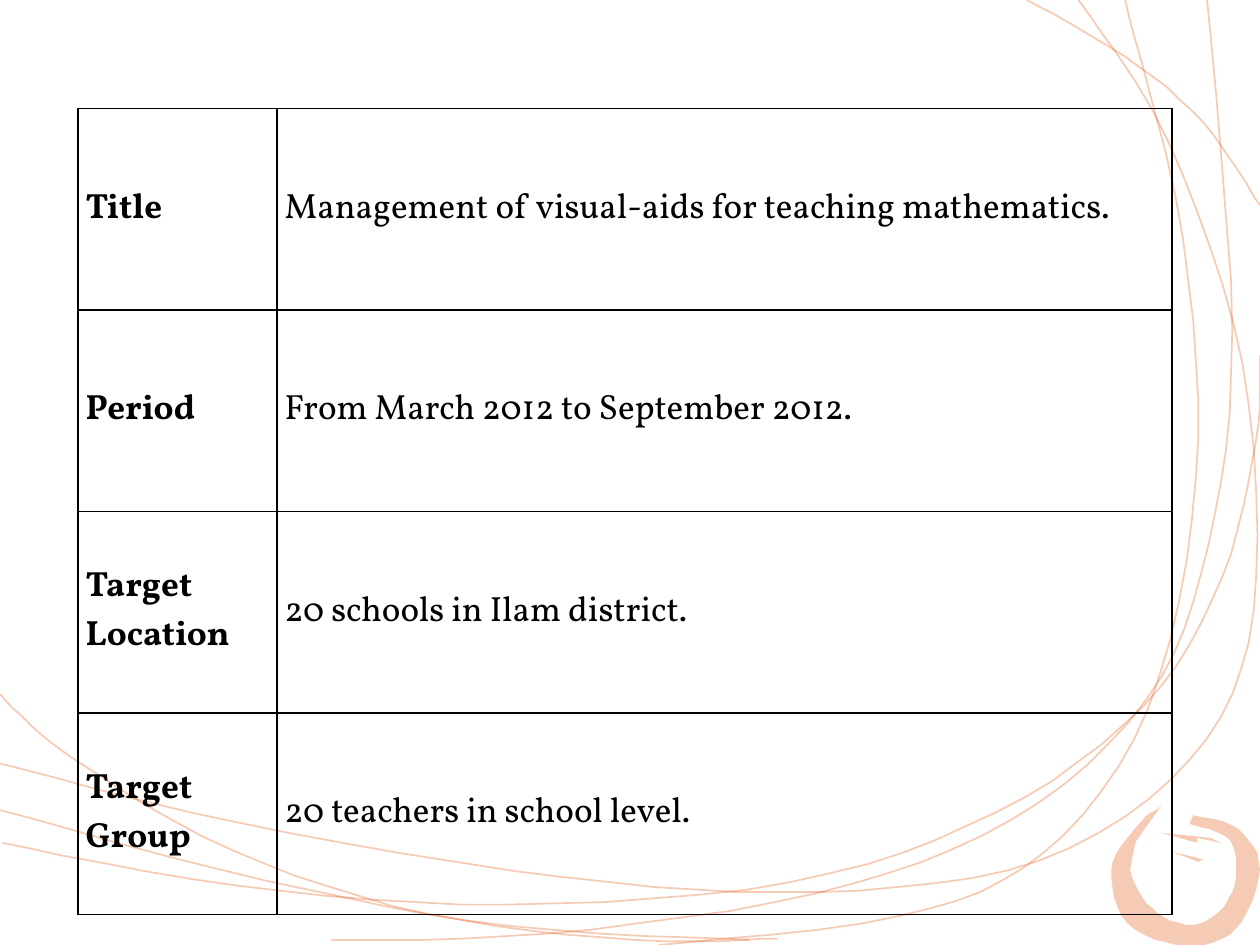
from lxml.etree import SubElement
from pptx import Presentation
from pptx.dml.color import RGBColor
from pptx.enum.text import MSO_ANCHOR as Anchor, PP_ALIGN as Align
from pptx.oxml.ns import qn
from pptx.util import Pt

PX = 9144  # EMU per px, 100 px to the inch
ORANGE = RGBColor(0xE3, 0x56, 0x0E)
BLACK = RGBColor(0x00, 0x00, 0x00)

ROWS = [
    ("Title", "Management of visual-aids for teaching mathematics."),
    ("Period", "From March 2012 to September 2012."),
    ("Target Location", "20 schools in Ilam district."),
    ("Target Group", "20 teachers in school level."),
]

# Points that each smooth strand passes through
STRANDS = [
    [(-3, 548), (55, 600), (185, 675), (338, 725), (504, 746), (617, 745)],
    [(523, 750), (714, 727), (828, 677), (911, 563), (949, 380), (939, 190), (893, 0)],
    [(0, 606), (190, 653), (446, 696), (649, 708), (825, 683), (945, 602),
     (995, 485), (986, 288), (927, 112), (856, 0)],
    [(2, 669), (189, 703), (403, 718), (628, 700), (790, 645), (908, 560),
     (970, 458), (997, 349), (1000, 282)],
    [(263, 746), (435, 741), (648, 709), (802, 651), (910, 555), (959, 433),
     (978, 263), (958, 0)],
    [(815, 0), (893, 45), (954, 96), (1000, 163)],
    [(0, 643), (211, 699), (405, 735), (595, 746)],
]
RING_OUTSIDE = [(947, 647), (983, 658), (1000, 690), (981, 737), (942, 751),
                (895, 733), (882, 690), (902, 656), (922, 639)]
RING_INSIDE = [(902, 667), (898, 695), (919, 725), (952, 733), (978, 708),
               (977, 668), (944, 654)]
SLIVERS = [
    [(922, 661), (961, 665), (969, 669), (950, 665), (950, 669)],
    [(930, 676), (955, 682), (951, 684)],
]


def smooth(points, steps=6):
    """Return points along a Catmull-Rom curve through the given points."""
    padded = [points[0], *points, points[-1]]
    curve = [points[0]]
    for before, start, end, after in zip(padded, padded[1:], padded[2:], padded[3:]):
        for step in range(1, steps + 1):
            t = step / steps
            curve.append(tuple(
                (2 * b + (c - a) * t + (2 * a - 5 * b + 4 * c - d) * t ** 2
                 + (3 * b - a - 3 * c + d) * t ** 3) / 2
                for a, b, c, d in zip(before, start, end, after)))
    return curve


class SlideBuilder:
    font_format = {"name": "Vollkorn", "size": Pt(20)}
    cell_format = {
        "vertical_anchor": Anchor.MIDDLE,
        "margin_left": 6 * PX, "margin_right": 6 * PX,
        "margin_top": 0, "margin_bottom": 0,
    }

    def __init__(self, slide):
        self.slide = slide

    def outline(self, points, close):
        builder = self.slide.shapes.build_freeform(*points[0], scale=PX)
        builder.add_line_segments(points[1:], close=close)
        shape = builder.convert_to_shape()
        shape.shadow.inherit = False
        return shape

    def set_opacity(self, shape, percent):
        color = next(shape.element.spPr.iter(qn("a:srgbClr")))
        SubElement(color, qn("a:alpha"), val=str(percent * 1000))

    def strand(self, points):
        shape = self.outline(smooth(points), close=False)
        shape.fill.background()
        shape.line.color.rgb = ORANGE
        shape.line.width = Pt(1)
        self.set_opacity(shape, 29)

    def brush_stroke(self, points):
        shape = self.outline(points, close=True)
        shape.fill.solid()
        shape.fill.fore_color.rgb = ORANGE
        shape.line.fill.background()
        self.set_opacity(shape, 30)

    def cell_borders(self, cell):
        properties = cell._tc.get_or_add_tcPr()
        for side in "LRTB":
            line = SubElement(properties, qn(f"a:ln{side}"), w=str(Pt(1)))
            fill = SubElement(line, qn("a:solidFill"))
            SubElement(fill, qn("a:srgbClr"), val=str(BLACK))

    def cell(self, cell, text, bold):
        for name, value in self.cell_format.items():
            setattr(cell, name, value)
        self.cell_borders(cell)
        cell.fill.background()
        paragraph = cell.text_frame.paragraphs[0]
        paragraph.alignment = Align.JUSTIFY
        run = paragraph.add_run()
        run.text = text
        for name, value in {**self.font_format, "bold": bold}.items():
            setattr(run.font, name, value)
        run.font.color.rgb = BLACK

    def table(self, left, top, column_widths, row_height, rows):
        """Add a grid whose first column holds bold labels."""
        table = self.slide.shapes.add_table(
            len(rows), len(column_widths), left * PX, top * PX,
            sum(column_widths) * PX, row_height * len(rows) * PX).table
        table.first_row = table.horz_banding = False
        for column, width in zip(table.columns, column_widths):
            column.width = width * PX
        for row_index, row in enumerate(rows):
            for column_index, text in enumerate(row):
                self.cell(table.cell(row_index, column_index), text, column_index == 0)


def main():
    presentation = Presentation()
    presentation.slide_width = 1000 * PX
    presentation.slide_height = 750 * PX
    builder = SlideBuilder(presentation.slides.add_slide(presentation.slide_layouts[6]))
    for points in STRANDS:
        builder.strand(points)
    for points in [smooth(RING_OUTSIDE) + smooth(RING_INSIDE), *SLIVERS]:
        builder.brush_stroke(points)
    builder.table(62, 86, (158, 710), 160, ROWS)
    presentation.save("out.pptx")


if __name__ == "__main__":
    main()
